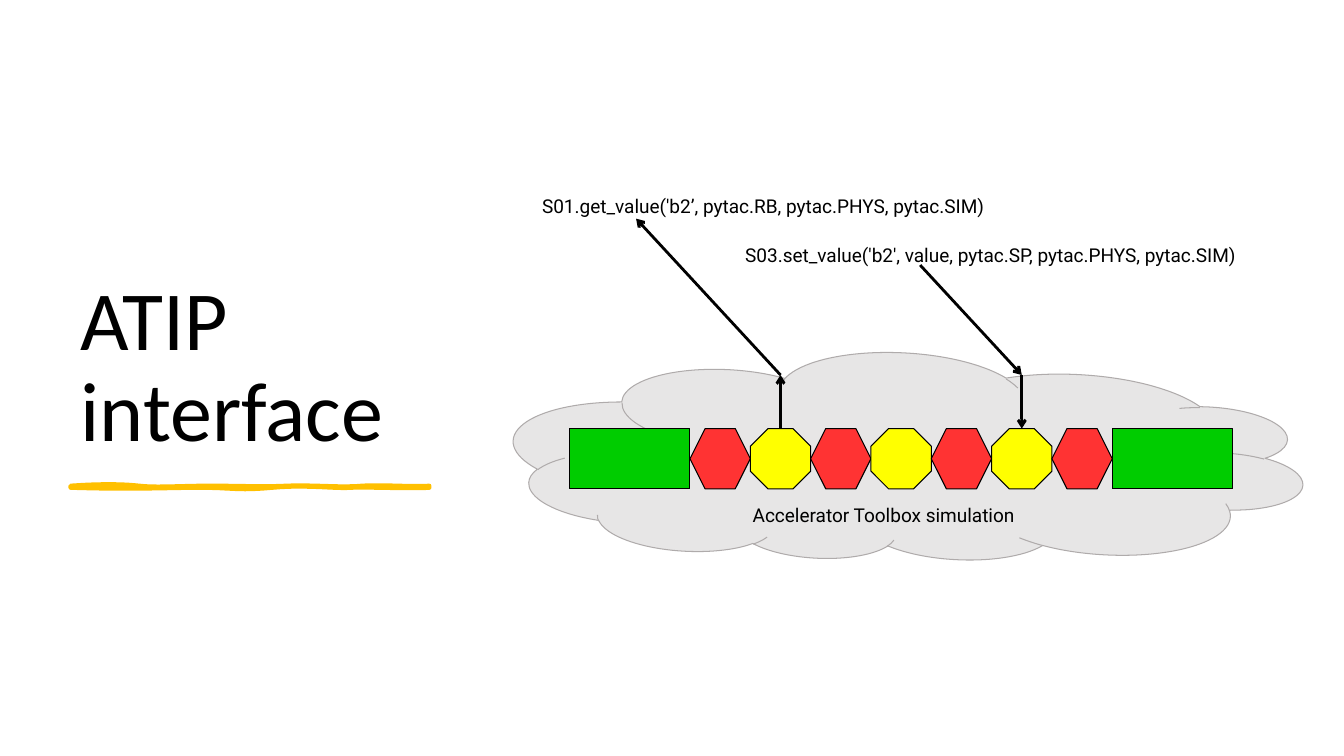
from lxml import etree
from pptx import Presentation
from pptx.dml.color import RGBColor
from pptx.enum.shapes import MSO_CONNECTOR, MSO_SHAPE
from pptx.enum.text import MSO_ANCHOR, MSO_AUTO_SIZE, PP_ALIGN
from pptx.oxml.ns import qn
from pptx.util import Cm, Pt

STRAIGHT = MSO_CONNECTOR.STRAIGHT
CLOUD, RECTANGLE = MSO_SHAPE.CLOUD, MSO_SHAPE.RECTANGLE
HEXAGON, OCTAGON = MSO_SHAPE.HEXAGON, MSO_SHAPE.OCTAGON
LEFT, CENTER = PP_ALIGN.LEFT, PP_ALIGN.CENTER
TOP, BOTTOM = MSO_ANCHOR.TOP, MSO_ANCHOR.BOTTOM
NO_AUTOFIT = MSO_AUTO_SIZE.NONE

COLORS = {
    "text": "000000", "outline": "000000", "underline": "FFC000",
    "cloud": "E7E6E6", "cloud_edge": "AFABAB",
    "green": "00CC00", "red": "FF3333", "yellow": "FFFF00",
}

# Kind of lattice element: shape, colour, width in cells
DRIFT = (RECTANGLE, "green", 2)
QUADRUPOLE = (HEXAGON, "red", 1)
MAGNET = (OCTAGON, "yellow", 1)
LATTICE = [DRIFT] + [QUADRUPOLE, MAGNET] * 3 + [QUADRUPOLE, DRIFT]
CELL = 1.52

# Brush stroke: Bézier segments (two controls, end) in cm from its left end
STROKE_TOP = [
    ((0.69, -0.05), (1.3, -0.05), (1.73, 0)),
    ((2.16, 0.05), (2.72, 0), (3.53, 0)),
    ((4.34, 0), (4.83, 0.03), (5.44, 0)),
    ((6.05, -0.03), (6.83, 0.05), (7.34, 0)),
    ((7.85, -0.03), (8.69, 0.03), (9.04, 0)),
]
STROKE_BOTTOM = [
    ((8.59, 0.08), (7.47, 0.03), (7.06, 0.05)),
    ((6.65, 0.08), (5.94, -0.03), (5.08, 0.05)),
    ((4.19, 0.13), (4.09, 0.05), (3.28, 0.05)),
    ((2.44, 0.05), (1.57, 0.1), (0, 0.05)),
]


def rgb(name):
    return RGBColor.from_string(COLORS[name])


def write(frame, text, font="Roboto", size=13.6, align=LEFT, anchor=TOP,
          wrap=True, space_after=7.8, line_spacing=1.0):
    frame.word_wrap = wrap
    frame.auto_size = NO_AUTOFIT
    frame.vertical_anchor = anchor
    paragraph = frame.paragraphs[0]
    paragraph.text = text
    paragraph.alignment = align
    paragraph.space_after = Pt(space_after)
    paragraph.line_spacing = line_spacing
    for run in paragraph.runs:
        run.font.name = font
        run.font.size = Pt(size)
        run.font.color.rgb = rgb("text")


def add_text(slide, left, top, width, height, text, **style):
    box = slide.shapes.add_textbox(Cm(left), Cm(top), Cm(width), Cm(height))
    write(box.text_frame, text, **style)


def paint(shape, fill, line, weight=0):
    shape.shadow.inherit = False
    shape.fill.solid()
    shape.fill.fore_color.rgb = rgb(fill)
    shape.line.color.rgb = rgb(line)
    shape.line.width = Pt(weight)


def add_preset(slide, kind, left, top, width, height, fill, line="outline"):
    shape = slide.shapes.add_shape(kind, Cm(left), Cm(top), Cm(width), Cm(height))
    paint(shape, fill, line)
    return shape


def add_arrow(slide, start, end):
    arrow = slide.shapes.add_connector(STRAIGHT, *[Cm(v) for v in (*start, *end)])
    arrow.line.color.rgb = rgb("outline")
    arrow.line.width = Pt(0)
    etree.SubElement(arrow.line._get_or_add_ln(), qn("a:tailEnd"), type="arrow")
    etree.SubElement(arrow._element.spPr, qn("a:effectLst"))


def curve_points(start, segments, steps=12):
    points = []
    for first, second, end in segments:
        for step in range(1, steps + 1):
            t = step / steps
            weights = ((1 - t) ** 3, 3 * t * (1 - t) ** 2, 3 * t * t * (1 - t), t ** 3)
            corners = (start, first, second, end)
            points.append(tuple(sum(w * c[axis] for w, c in zip(weights, corners))
                                for axis in (0, 1)))
        start = end
    return points


def add_title(slide, left, top, width, height):
    title = slide.shapes.title
    title.left, title.top = Cm(left), Cm(top)
    title.width, title.height = Cm(width), Cm(height)
    write(title.text_frame, "ATIP\ninterface", font="Calibri", size=60,
          anchor=BOTTOM, space_after=0, line_spacing=0.9)


def add_underline(slide, left, top):
    right_end = (9.04, 0.05)
    outline = (curve_points((0, 0), STROKE_TOP) + [right_end]
               + curve_points(right_end, STROKE_BOTTOM))
    builder = slide.shapes.build_freeform(Cm(left), Cm(top))
    builder.add_line_segments([(Cm(left + x), Cm(top + y)) for x, y in outline])
    paint(builder.convert_to_shape(), "underline", "underline", 3)


def add_lattice(slide, left, top):
    """Draw the row of elements and return the centre of each one."""
    centers = []
    for kind, color, cells in LATTICE:
        width = cells * CELL
        add_preset(slide, kind, left, top, width, CELL, color)
        centers.append(left + width / 2)
        left += width
    return centers


def add_simulation(slide, left, top):
    cloud = add_preset(slide, CLOUD, left, top + 4.14, 19.91, 5.28,
                       "cloud", "cloud_edge")
    cloud.rotation = 183
    lattice_top = top + 6.02
    centers = add_lattice(slide, left + 1.42, lattice_top)
    add_text(slide, left + 5.69, top + 7.79, 7.29, 0.76,
             "Accelerator Toolbox simulation", align=CENTER)

    # Value read from the first magnet
    cloud_edge = top + 4.67
    read_x, set_x = centers[2], centers[6]
    add_arrow(slide, (read_x, lattice_top), (read_x, cloud_edge))
    add_arrow(slide, (read_x, cloud_edge), (left + 3.1, top + 0.73))
    add_text(slide, left + 0.48, top, 12.17, 0.81,
             "S01.get_value('b2’, pytac.RB, pytac.PHYS, pytac.SIM)", wrap=False)

    # Value set on the third magnet
    add_arrow(slide, (left + 10.26, top + 1.9), (set_x, cloud_edge))
    add_arrow(slide, (set_x, cloud_edge), (set_x, lattice_top))
    add_text(slide, left + 5.6, top + 1.22, 13.46, 0.81,
             "S03.set_value('b2', value, pytac.SP, pytac.PHYS, pytac.SIM)", wrap=False)


def main():
    deck = Presentation()
    deck.slide_width, deck.slide_height = Cm(33.87), Cm(19.05)
    slide = deck.slides.add_slide(deck.slide_layouts[5])
    add_title(slide, 1.78, 1.78, 9.93, 9.93)
    add_underline(slide, 1.78, 12.24)
    add_simulation(slide, 12.93, 4.78)
    deck.save("out.pptx")


if __name__ == "__main__":
    main()
